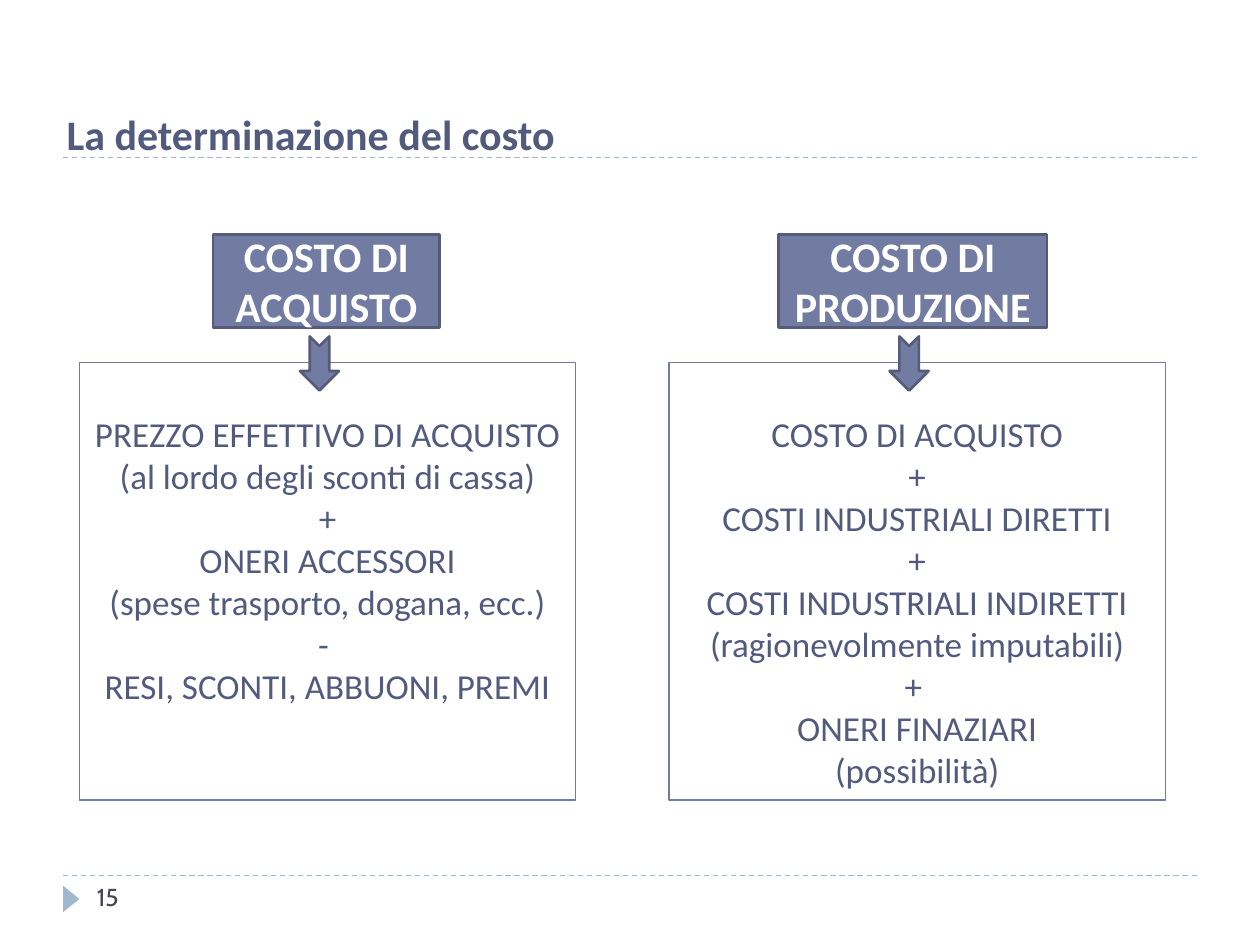
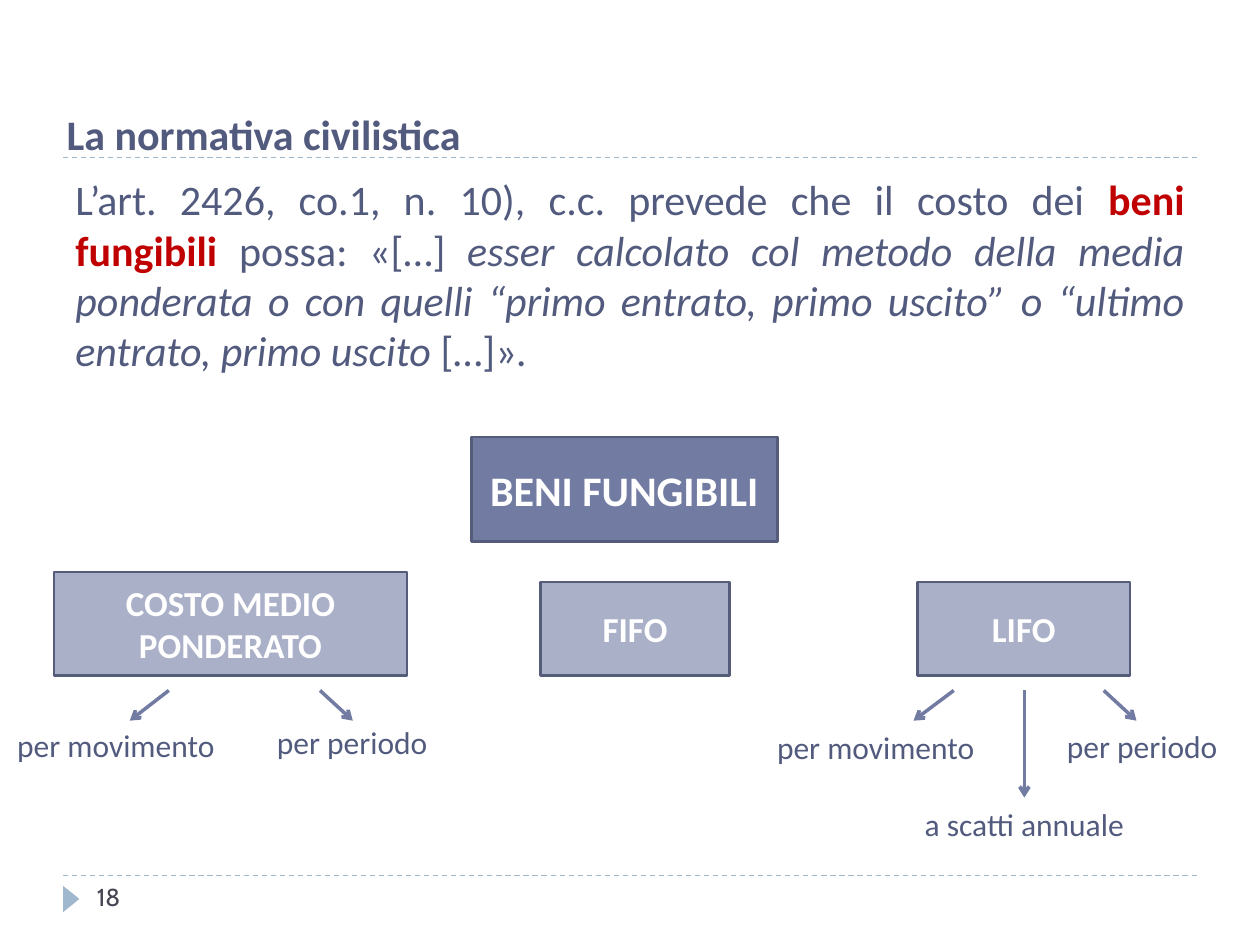
"""Build two slides on inventory cost: how it is determined and the civil-law rules."""
from lxml import etree
from pptx import Presentation
from pptx.dml.color import RGBColor
from pptx.enum import dml, shapes, text
from pptx.oxml import ns
from pptx.util import Inches, Pt

INK = RGBColor(0x52, 0x5B, 0x7E)
SLATE = RGBColor(0x72, 0x7C, 0xA3)
PALE_SLATE = RGBColor(0xAA, 0xB0, 0xC8)
EDGE = RGBColor(0x54, 0x5C, 0x79)
SKY = RGBColor(0x9F, 0xB8, 0xCD)
PAGE_GREY = RGBColor(0x46, 0x46, 0x53)
RED = RGBColor(0xC0, 0x00, 0x00)
WHITE = RGBColor(0xFF, 0xFF, 0xFF)

CENTER, LEFT, JUSTIFY = (text.PP_ALIGN.CENTER, text.PP_ALIGN.LEFT, text.PP_ALIGN.JUSTIFY)
SHAPE = shapes.MSO_SHAPE

COST_TITLE, COST_PAGE = "La determinazione del costo", "15"
COST_COLUMNS = [
    {"heading": "COSTO DI ACQUISTO", "heading_left": 1.69, "heading_width": 1.8, "left": 0.63,
     "parts": ["PREZZO EFFETTIVO DI ACQUISTO", "(al lordo degli sconti di cassa)", "+",
               "ONERI ACCESSORI", "(spese trasporto, dogana, ecc.)", "- ",
               "RESI, SCONTI, ABBUONI, PREMI"]},
    {"heading": "COSTO DI PRODUZIONE", "heading_left": 6.18, "heading_width": 2.13, "left": 5.31,
     "parts": ["COSTO DI ACQUISTO", "+", "COSTI INDUSTRIALI DIRETTI", "+",
               "COSTI INDUSTRIALI INDIRETTI (ragionevolmente imputabili)", "+ ",
               "ONERI FINAZIARI", "(possibilità)"]},
]

RULES_TITLE, RULES_PAGE = "La normativa civilistica", "18"
ARTICLE = [
    ("L’art. 2426, co.1, n. 10), c.c. prevede che il costo dei ", {}),
    ("beni fungibili ", {"color": RED, "bold": True}),
    ("possa: «[…] ", {}),
    ("esser calcolato col metodo della media ponderata o con quelli “primo entrato, "
     "primo uscito” o “ultimo entrato, primo uscito ", {"italic": True}),
    ("[…]»", {}),
    (".", {"italic": True}),
]
GOODS = ("BENI FUNGIBILI", (3.74, 3.47, 2.43, 0.83))
METHODS = [
    ("COSTO MEDIO PONDERATO", 0.43, 2.8, 0.82),
    ("FIFO", 4.29, 1.5, 0.74),
    ("LIFO", 7.28, 1.69, 0.74),
]
METHODS_BOTTOM = 5.36
VARIANTS = [
    ("per movimento", (-0.04, 5.71, 1.92)),
    ("per periodo", (2.05, 5.69, 1.49)),
    ("per movimento", (5.99, 5.73, 1.92)),
    ("per periodo", (8.32, 5.72, 1.49)),
    ("a scatti annuale", (7.2, 6.34, 1.86)),
]
BRANCH_TOP, BRANCH_END = 5.48, 5.72
BRANCHES = [(1.34, 1.03, BRANCH_END), (2.54, 2.8, BRANCH_END), (7.57, 7.25, BRANCH_END),
            (8.76, 9.02, BRANCH_END), (8.13, 8.13, 6.33)]


def write(frame, paragraphs, size, align=CENTER, color=INK, bold=False, font="Calibri"):
    """Fill a text frame with paragraphs, each a list of (wording, style) runs."""
    frame.word_wrap = True
    for index, runs in enumerate(paragraphs):
        paragraph = frame.paragraphs[0] if index == 0 else frame.add_paragraph()
        paragraph.alignment = align
        for wording, style in runs:
            run = paragraph.add_run()
            run.text = wording
            run.font.name = font
            run.font.size = Pt(size)
            run.font.bold = style.get("bold", bold)
            run.font.italic = style.get("italic", False)
            run.font.color.rgb = style.get("color", color)


def add_label(slide, place, paragraphs, size, **style):
    """Add a top-anchored text box."""
    label = slide.shapes.add_textbox(*map(Inches, place))
    write(label.text_frame, paragraphs, size, **style)


def add_block(slide, kind, place, fill=None, edge=None, weight=1.5, rotation=0):
    """Add a flat preset shape."""
    block = slide.shapes.add_shape(kind, *map(Inches, place))
    block.shadow.inherit = False
    block.rotation = rotation
    if fill is None:
        block.fill.background()
    else:
        block.fill.solid()
        block.fill.fore_color.rgb = fill
    if edge is None:
        block.line.fill.background()
    else:
        block.line.color.rgb = edge
        block.line.width = Pt(weight)
    return block


def add_heading(slide, wording, place, size, fill=SLATE):
    """Add a filled box with bold white text."""
    heading = add_block(slide, SHAPE.RECTANGLE, place, fill, EDGE)
    heading.text_frame.vertical_anchor = text.MSO_ANCHOR.MIDDLE
    write(heading.text_frame, [[(wording, {})]], size, color=WHITE, bold=True)


def add_line(slide, start, end, color, weight):
    """Add a straight line without shadow."""
    line = slide.shapes.add_connector(shapes.MSO_CONNECTOR.STRAIGHT,
                                      *map(Inches, (*start, *end)))
    line.line.color.rgb = color
    line.line.width = Pt(weight)
    etree.SubElement(line._element.spPr, ns.qn("a:effectLst"))
    return line


def add_base(deck, title, page):
    """Add a slide with the shared rules, marker, title and page number."""
    slide = deck.slides.add_slide(deck.slide_layouts[6])
    for y in (6.95, 1.25):
        rule = add_line(slide, (0.5, y), (9.5, y), SKY, 0.75)
        rule.line.dash_style = dml.MSO_LINE.DASH
    add_block(slide, SHAPE.ISOSCELES_TRIANGLE, (0.46, 7.07, 0.21, 0.13), SKY, rotation=90)
    add_label(slide, (0.43, 0.81, 8.91, 0.5), [[(title, {})]], 24, align=LEFT, bold=True)
    add_label(slide, (0.67, 6.95, 2.17, 0.4), [[(page, {})]], 14, align=LEFT,
              color=PAGE_GREY, font="Cabin")
    return slide


def build_cost(deck):
    """Show purchase cost and production cost side by side."""
    slide = add_base(deck, COST_TITLE, COST_PAGE)
    for column in COST_COLUMNS:
        left = column["left"]
        add_heading(slide, column["heading"],
                    (column["heading_left"], 1.86, column["heading_width"], 0.74), 24)
        panel = add_block(slide, SHAPE.RECTANGLE, (left, 2.88, 3.94, 3.47),
                          edge=SLATE, weight=0.75)
        panel.text_frame.vertical_anchor = text.MSO_ANCHOR.TOP
        panel.text_frame.margin_top = Inches(0.39)
        write(panel.text_frame, [[(part, {})] for part in column["parts"]], 20)
        add_block(slide, SHAPE.NOTCHED_RIGHT_ARROW, (left + 1.69, 2.73, 0.43, 0.31),
                  SLATE, EDGE, rotation=90)


def build_rules(deck):
    """Show the article and the tree of valuation methods."""
    slide = add_base(deck, RULES_TITLE, RULES_PAGE)
    add_label(slide, (0.5, 1.33, 9, 1.8), [ARTICLE], 24, align=JUSTIFY)
    add_heading(slide, *GOODS, 24)
    for method, left, width, height in METHODS:
        add_heading(slide, method, (left, METHODS_BOTTOM - height, width, height),
                    20, PALE_SLATE)
    for variant, place in VARIANTS:
        add_label(slide, (*place, 0.4), [[(variant, {})]], 18)
    for start_x, end_x, end_y in BRANCHES:
        branch = add_line(slide, (start_x, BRANCH_TOP), (end_x, end_y), SLATE, 2)
        etree.SubElement(branch.line._get_or_add_ln(), ns.qn("a:tailEnd"), type="arrow")


def main():
    """Build and save the deck."""
    deck = Presentation()
    deck.slide_width, deck.slide_height = Inches(10), Inches(7.5)
    build_cost(deck)
    build_rules(deck)
    deck.save("out.pptx")


if __name__ == "__main__":
    main()
